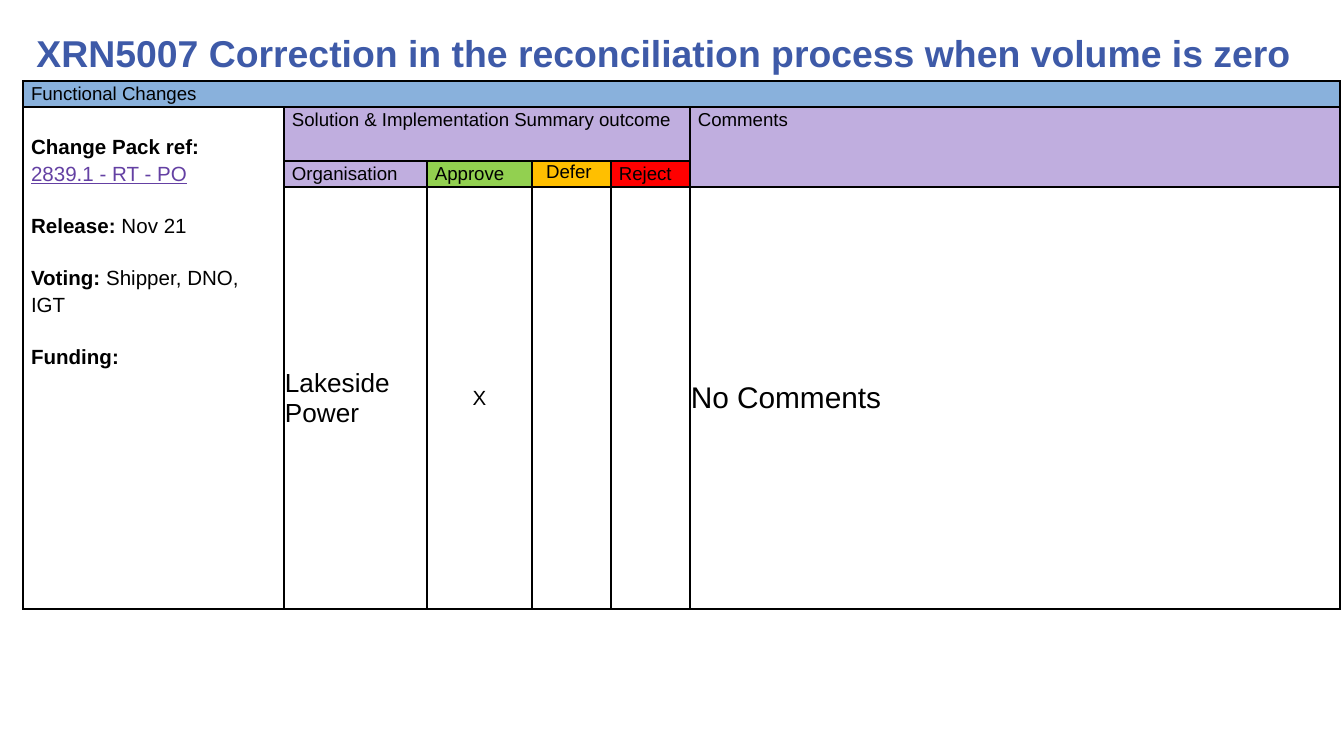
from dataclasses import dataclass
from lxml.etree import SubElement
from pptx import Presentation
from pptx.dml.color import RGBColor
from pptx.enum.text import MSO_ANCHOR, MSO_AUTO_SIZE, PP_ALIGN
from pptx.oxml.ns import qn
from pptx.util import Emu, Pt

SCALE = 914400 / 134.4


@dataclass(frozen=True)
class Theme:
    font: str = "Arial"
    title: str = "3E5AA8"
    ink: str = "000000"
    link: str = "6440A3"
    blue: str = "89B1DC"
    lilac: str = "C0AEDF"
    green: str = "92D050"
    amber: str = "FFBF00"
    red: str = "FF0000"
    head: int = 20
    label: int = 10
    body: int = 11
    name: int = 14
    note: int = 16
    rule: int = 1


THEME = Theme()
COLS = [261, 143, 105, 79, 79, 650]
ROWS = [26, 54, 26, 422]
LEFT, TOP = 23, 81

# Cell formats: margins in px
WIDE = {"margin_left": 8, "margin_right": 8, "margin_top": 0, "margin_bottom": 0}
SLIM = {"margin_left": 1, "margin_right": 1, "margin_top": 1, "margin_bottom": 0}
LOOSE = {"line_spacing": 1.15}
MID = {"alignment": PP_ALIGN.CENTER}
GAP = {**LOOSE, "space_before": Pt(14)}


def px(num):
    return Emu(round(num * SCALE))


def apply(item, form):
    for key, value in form.items():
        setattr(item, key, value)


def add_run(para, text, size, color=THEME.ink, bold=False, line=False):
    run = para.add_run()
    run.text = text
    apply(run.font, {"name": THEME.font, "size": Pt(size),
                     "bold": bold, "underline": line})
    run.font.color.rgb = RGBColor.from_string(color)


def add_title(slide, text):
    shape = slide.shapes.title
    apply(shape, {"left": px(23), "top": px(23),
                  "width": px(1305), "height": px(59)})
    frame = shape.text_frame
    apply(frame, {"word_wrap": True, "auto_size": MSO_AUTO_SIZE.NONE,
                  "vertical_anchor": MSO_ANCHOR.MIDDLE})
    para = frame.paragraphs[0]
    para.alignment = PP_ALIGN.LEFT
    add_run(para, text, THEME.head, THEME.title, bold=True)


def add_edges(cell):
    props = cell._tc.get_or_add_tcPr()
    for side in ("a:lnL", "a:lnR", "a:lnT", "a:lnB"):
        line = SubElement(props, qn(side), w=str(Pt(THEME.rule)))
        fill = SubElement(line, qn("a:solidFill"))
        SubElement(fill, qn("a:srgbClr"), val=THEME.ink)


def add_grid(slide):
    frame = slide.shapes.add_table(len(ROWS), len(COLS), px(LEFT), px(TOP),
                                   px(sum(COLS)), px(sum(ROWS)))
    table = frame.table
    apply(table, {"first_row": False, "horz_banding": False})
    for col, width in zip(table.columns, COLS):
        col.width = px(width)
    for row, height in zip(table.rows, ROWS):
        row.height = px(height)
    for cell in table.iter_cells():
        add_edges(cell)
        cell.fill.background()
    # Joined cells: first and last corner
    for start, end in (((0, 0), (0, 5)), ((1, 0), (3, 0)),
                       ((1, 1), (1, 4)), ((1, 5), (2, 5))):
        table.cell(*start).merge(table.cell(*end))
    return table


def fill_cell(cell, text, size=THEME.label, fill=None, pads=WIDE, form=LOOSE,
              anchor=MSO_ANCHOR.TOP):
    apply(cell, {key: px(num) for key, num in pads.items()})
    cell.vertical_anchor = anchor
    if fill:
        cell.fill.solid()
        cell.fill.fore_color.rgb = RGBColor.from_string(fill)
    para = cell.text_frame.paragraphs[0]
    apply(para, form)
    add_run(para, text, size)


def fill_facts(cell):
    apply(cell, {key: px(num) for key, num in {**WIDE, "margin_top": 26}.items()})
    frame = cell.text_frame
    first = frame.paragraphs[0]
    apply(first, LOOSE)
    add_run(first, "Change Pack ref:", THEME.body, bold=True)
    ref = frame.add_paragraph()
    apply(ref, LOOSE)
    add_run(ref, "2839.1 - RT - PO", THEME.body, THEME.link, line=True)
    for label, value in (("Release:", " Nov 21"),
                         ("Voting:", " Shipper, DNO, IGT"),
                         ("Funding:", "")):
        para = frame.add_paragraph()
        apply(para, GAP)
        add_run(para, label, THEME.body, bold=True)
        if value:
            add_run(para, value, THEME.body)


def main():
    deck = Presentation()
    apply(deck, {"slide_width": px(1344), "slide_height": px(756)})
    slide = deck.slides.add_slide(deck.slide_layouts[5])
    add_title(slide, "XRN5007 Correction in the reconciliation process "
                     "when volume is zero")
    table = add_grid(slide)

    # Headings
    for row, col, text, fill in (
            (0, 0, "Functional Changes", THEME.blue),
            (1, 1, "Solution & Implementation Summary outcome", THEME.lilac),
            (1, 5, "Comments", THEME.lilac),
            (2, 1, "Organisation", THEME.lilac),
            (2, 2, "Approve", THEME.green),
            (2, 4, "Reject", THEME.red)):
        fill_cell(table.cell(row, col), text, fill=fill)
    fill_cell(table.cell(2, 3), "Defer ", fill=THEME.amber, pads=SLIM, form=MID)

    # Change details and the vote
    fill_facts(table.cell(1, 0))
    for col, text, size, form in ((1, "Lakeside Power", THEME.name, {}),
                                  (2, "X", THEME.body, MID),
                                  (5, "No Comments", THEME.note, {})):
        fill_cell(table.cell(3, col), text, size, pads=SLIM, form=form,
                  anchor=MSO_ANCHOR.MIDDLE)
    deck.save("out.pptx")


if __name__ == "__main__":
    main()
